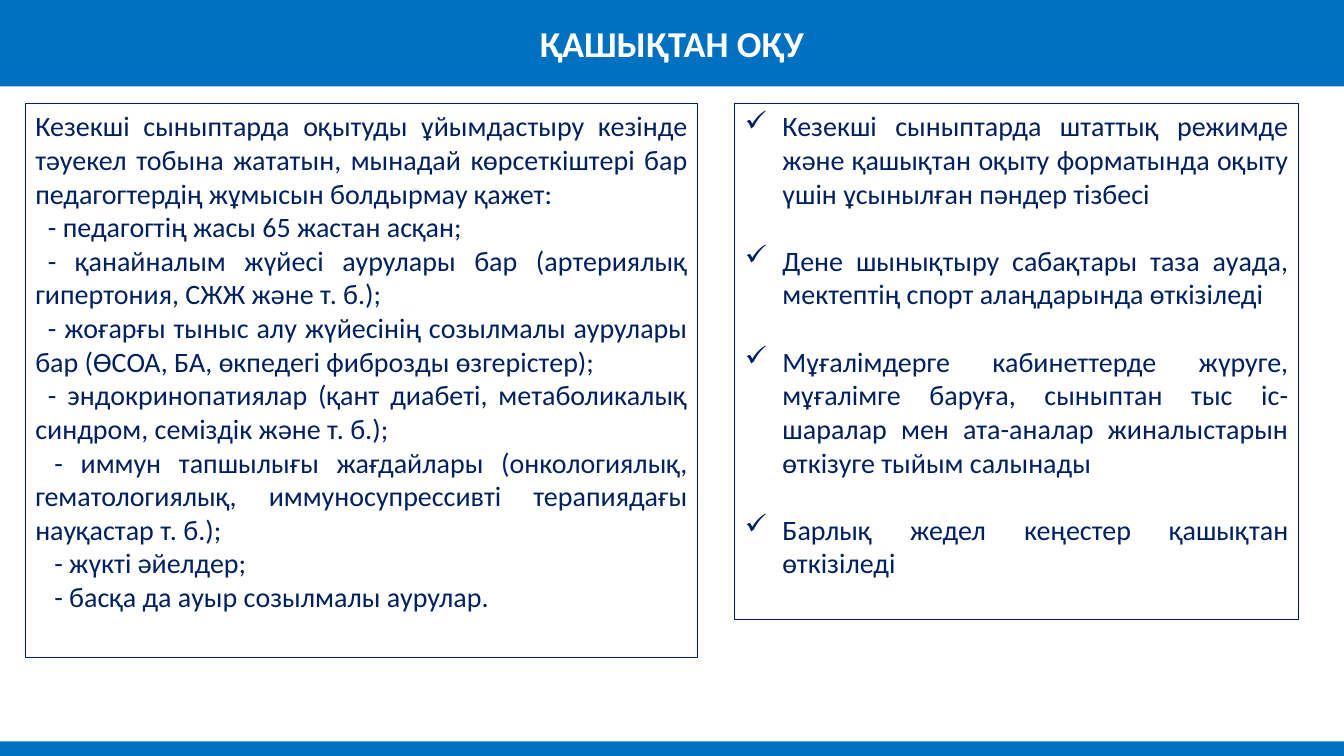
from lxml import etree
from pptx import Presentation
from pptx.dml.color import RGBColor
from pptx.enum.shapes import MSO_SHAPE
from pptx.enum.text import MSO_ANCHOR, PP_ALIGN
from pptx.oxml.ns import qn
from pptx.util import Cm, Pt

RECTANGLE = MSO_SHAPE.RECTANGLE
TOP, MIDDLE = MSO_ANCHOR.TOP, MSO_ANCHOR.MIDDLE
CENTER, JUSTIFY = PP_ALIGN.CENTER, PP_ALIGN.JUSTIFY

BLUE, NAVY, WHITE = "0070C0", "002060", "FFFFFF"
SLIDE_WIDTH, SLIDE_HEIGHT = 33.87, 19.05
HEADER_HEIGHT, FOOTER_HEIGHT = 2.18, 0.37
PANEL_TOP = 2.62
NARROW_INDENT, WIDE_INDENT = 0.32, 0.48
CHECK_INDENT = 0.95
CHECK_GAP = 24

RISK_INTRO = (
    "Кезекші сыныптарда оқытуды ұйымдастыру кезінде тәуекел тобына жататын, "
    "мынадай көрсеткіштері бар педагогтердің жұмысын болдырмау қажет:"
)
RISK_GROUPS = [
    ("педагогтің жасы 65 жастан асқан;", NARROW_INDENT),
    ("қанайналым жүйесі аурулары бар (артериялық гипертония, СЖЖ және т. б.);", NARROW_INDENT),
    ("жоғарғы тыныс алу жүйесінің созылмалы аурулары бар "
     "(ӨСОА, БА, өкпедегі фиброзды өзгерістер);", NARROW_INDENT),
    ("эндокринопатиялар (қант диабеті, метаболикалық синдром, семіздік және т. б.);",
     NARROW_INDENT),
    ("иммун тапшылығы жағдайлары (онкологиялық, гематологиялық, "
     "иммуносупрессивті терапиядағы науқастар т. б.);", WIDE_INDENT),
    ("жүкті әйелдер;", WIDE_INDENT),
    ("басқа да ауыр созылмалы аурулар.", WIDE_INDENT),
]
SCHOOL_RULES = [
    "Кезекші сыныптарда штаттық режимде және қашықтан оқыту форматында оқыту "
    "үшін ұсынылған пәндер тізбесі",
    "Дене шынықтыру сабақтары таза ауада, мектептің спорт алаңдарында өткізіледі",
    "Мұғалімдерге кабинеттерде жүруге, мұғалімге баруға, сыныптан тыс "
    "іс-шаралар мен ата-аналар жиналыстарын өткізуге тыйым салынады",
    "Барлық жедел кеңестер қашықтан өткізіледі",
]


def color(hex_code):
    """Turn a hex string into a colour."""
    return RGBColor.from_string(hex_code)


def add_box(slide, left, top, width, height, fill=None, line=None, anchor=TOP):
    """Add a rectangle with an optional fill and outline and return its text frame."""
    box = slide.shapes.add_shape(RECTANGLE, Cm(left), Cm(top), Cm(width), Cm(height))
    box.shadow.inherit = False
    if fill:
        box.fill.solid()
        box.fill.fore_color.rgb = color(fill)
    else:
        box.fill.background()
    if line:
        box.line.color.rgb = color(line)
        box.line.width = Pt(0.75)
    else:
        box.line.fill.background()
    frame = box.text_frame
    frame.word_wrap = True
    frame.vertical_anchor = anchor
    return frame


def add_text(frame, text, size=20, ink=NAVY, bold=False, align=JUSTIFY,
             margin=0, first_line=0, bullet=None, gap=0):
    """Write one formatted paragraph into a text frame."""
    first = frame.paragraphs[0]
    paragraph = frame.add_paragraph() if first.runs else first
    paragraph.alignment = align
    paragraph.space_after = Pt(gap)
    run = paragraph.add_run()
    run.text = text
    run.font.name = "Calibri"
    run.font.size = Pt(size)
    run.font.bold = bold
    run.font.color.rgb = color(ink)
    properties = paragraph._p.get_or_add_pPr()
    properties.set("marL", str(Cm(margin)))
    properties.set("indent", str(Cm(first_line)))
    if bullet:
        etree.SubElement(properties, qn("a:buChar")).set("char", bullet)


def add_header(slide, title):
    """Add the title band and the thin footer band."""
    header = add_box(slide, 0, 0, SLIDE_WIDTH, HEADER_HEIGHT, fill=BLUE, anchor=MIDDLE)
    add_text(header, title, size=26, ink=WHITE, bold=True, align=CENTER)
    add_box(slide, 0, SLIDE_HEIGHT - FOOTER_HEIGHT, SLIDE_WIDTH, FOOTER_HEIGHT, fill=BLUE)


def add_risk_panel(slide):
    """Add the panel listing teachers in the risk groups."""
    panel = add_box(slide, 0.64, PANEL_TOP, 16.94, 13.94, line=NAVY)
    add_text(panel, RISK_INTRO)
    for group, indent in RISK_GROUPS:
        add_text(panel, f"- {group}", first_line=indent)


def add_rules_panel(slide):
    """Add the panel with the check-marked school rules."""
    panel = add_box(slide, 18.52, PANEL_TOP, 14.2, 13, line=NAVY)
    for rule in SCHOOL_RULES:
        add_text(panel, rule, margin=CHECK_INDENT, first_line=-CHECK_INDENT,
                 bullet="✓", gap=CHECK_GAP)


def main():
    """Build and save the slide."""
    deck = Presentation()
    deck.slide_width, deck.slide_height = Cm(SLIDE_WIDTH), Cm(SLIDE_HEIGHT)
    slide = deck.slides.add_slide(deck.slide_layouts[6])
    add_header(slide, "ҚАШЫҚТАН ОҚУ")
    add_risk_panel(slide)
    add_rules_panel(slide)
    deck.save("out.pptx")


if __name__ == "__main__":
    main()
